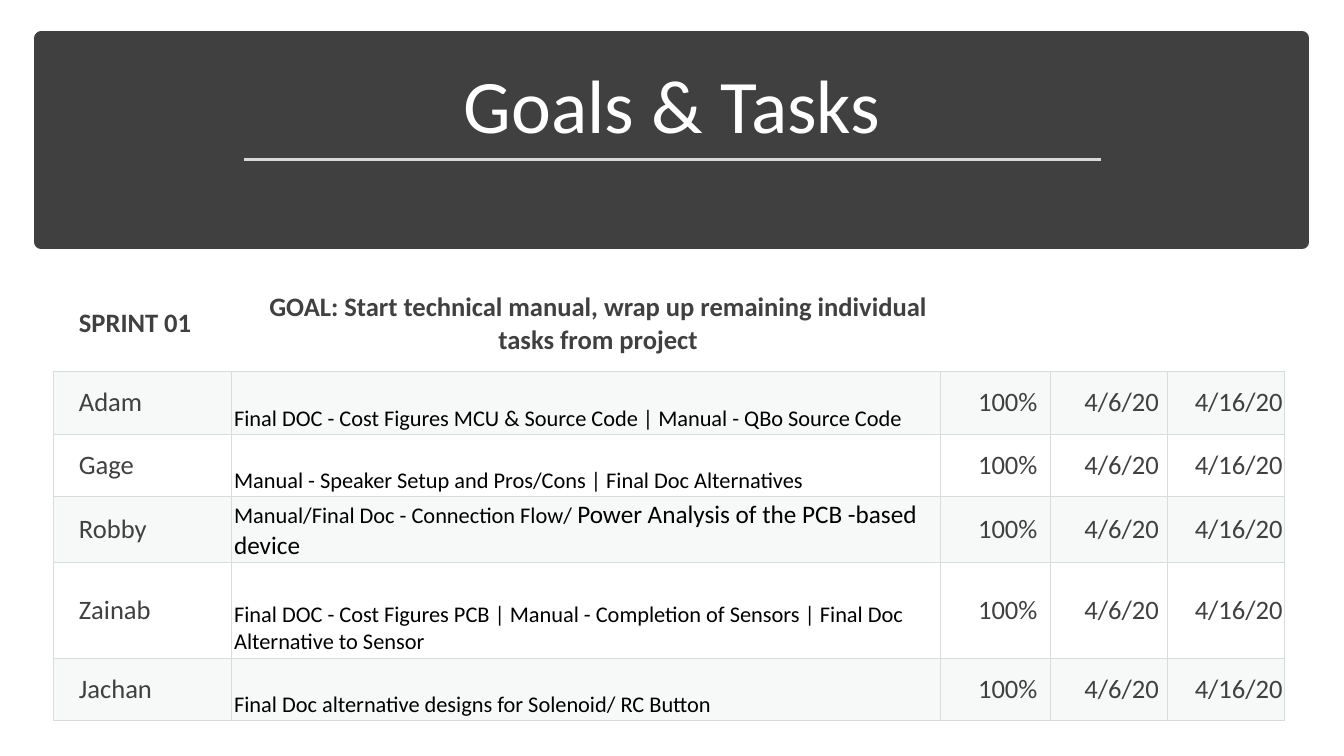
from lxml import etree
from pptx import Presentation
from pptx.dml.color import RGBColor
from pptx.enum.shapes import MSO_CONNECTOR, MSO_SHAPE
from pptx.enum.text import MSO_ANCHOR as ANCHOR, PP_ALIGN as ALIGN
from pptx.oxml import parse_xml
from pptx.oxml.ns import nsdecls, qn
from pptx.util import Cm, Pt

DARK = RGBColor(0x40, 0x40, 0x40)
WHITE = RGBColor(0xFF, 0xFF, 0xFF)
BLACK = RGBColor(0, 0, 0)
RULE = RGBColor(0xD9, 0xD9, 0xD9)
BORDER = RGBColor(0xD8, 0xDC, 0xDC)
BAND = RGBColor(0xD8, 0xDE, 0xDC)


def write(tf, text, size=19, color=DARK, bold=False, align=ALIGN.LEFT):
    p = tf.paragraphs[0]
    p.alignment = align
    r = p.add_run()
    r.text = text
    r.font.name = "Calibri"
    r.font.size = Pt(size)
    r.font.bold = bold
    r.font.color.rgb = color


def add_borders(cell, sides):
    for side in sides:
        cell._tc.get_or_add_tcPr().append(parse_xml(
            f'<a:ln{side} {nsdecls("a")} w="{Pt(0.75)}"><a:solidFill>'
            f'<a:srgbClr val="{BORDER}"/></a:solidFill></a:ln{side}>'))


prs = Presentation()
prs.slide_width, prs.slide_height = Cm(33.87), Cm(19.05)
s = prs.slides.add_slide(prs.slide_layouts[6])

banner = s.shapes.add_shape(MSO_SHAPE.RECTANGLE, Cm(1.04), Cm(0.97), Cm(31.78), Cm(5.13))
banner.shadow.inherit = False
banner.fill.solid()
banner.fill.fore_color.rgb = DARK
banner.line.color.rgb = DARK
banner.line.width = Pt(10)

title = s.shapes.add_textbox(Cm(1.47), Cm(1.3), Cm(30.94), Cm(2.59))
tf = title.text_frame
tf.word_wrap = True
tf.vertical_anchor = ANCHOR.BOTTOM
write(tf, "Goals & Tasks", size=54, color=WHITE, align=ALIGN.CENTER)
tf.paragraphs[0].line_spacing = 0.9

rule = s.shapes.add_connector(MSO_CONNECTOR.STRAIGHT, Cm(6.15), Cm(4.02), Cm(27.74), Cm(4.02))
rule.line.color.rgb = RULE
rule.line.width = Pt(1.75)
etree.SubElement(rule._element.spPr, qn("a:effectLst"))

col_widths = [4.48, 17.86, 2.79, 2.95, 2.95]
row_heights = [2.4, 1.58, 1.58, 1.66, 2.4, 1.58]
header = ["SPRINT 01",
          "GOAL: Start technical manual, wrap up remaining individual tasks from project",
          "", "", ""]
tasks = [
    ("Adam", "Final DOC - Cost Figures MCU & Source Code | Manual - QBo Source Code"),
    ("Gage", "Manual - Speaker Setup and Pros/Cons | Final Doc Alternatives"),
    ("Robby", "Manual/Final Doc - Connection Flow/ "),
    ("Zainab", "Final DOC - Cost Figures PCB | Manual - Completion of Sensors | "
               "Final Doc Alternative to Sensor"),
    ("Jachan", "Final Doc alternative designs for Solenoid/ RC Button"),
]
rows = [header] + [[name, task, "100%", "4/6/20", "4/16/20"] for name, task in tasks]

table = s.shapes.add_table(len(rows), len(col_widths), Cm(1.35), Cm(6.96),
                           Cm(sum(col_widths)), Cm(sum(row_heights))).table
table.first_row = table.horz_banding = False
for col, width in zip(table.columns, col_widths):
    col.width = Cm(width)
for row, height in zip(table.rows, row_heights):
    row.height = Cm(height)

for i, row in enumerate(rows):
    for j, text in enumerate(row):
        cell = table.cell(i, j)
        is_task = i > 0 and j == 1
        if is_task:
            cell.vertical_anchor = ANCHOR.BOTTOM
            cell.margin_left = cell.margin_right = Cm(0.07)
            cell.margin_top = cell.margin_bottom = Cm(0.05)
            write(cell.text_frame, text, size=16, color=BLACK)
        else:
            cell.vertical_anchor = ANCHOR.MIDDLE
            cell.margin_left, cell.margin_right = Cm(0.64), Cm(0.02)
            cell.margin_top = cell.margin_bottom = Cm(0.32)
            if text:
                write(cell.text_frame, text, bold=i == 0,
                      align=ALIGN.CENTER if j else ALIGN.LEFT)
        add_borders(cell, "LRTB" if i else "B")
        if i % 2:
            cell.fill.solid()
            cell.fill.fore_color.rgb = BAND
            clr = cell._tc.tcPr.find(qn("a:solidFill")).find(qn("a:srgbClr"))
            etree.SubElement(clr, qn("a:alpha"), val="20000")
        else:
            cell.fill.background()

write(table.cell(3, 1).text_frame, "Power Analysis of the PCB -based device",
      size=18, color=BLACK)

prs.save("out.pptx")
